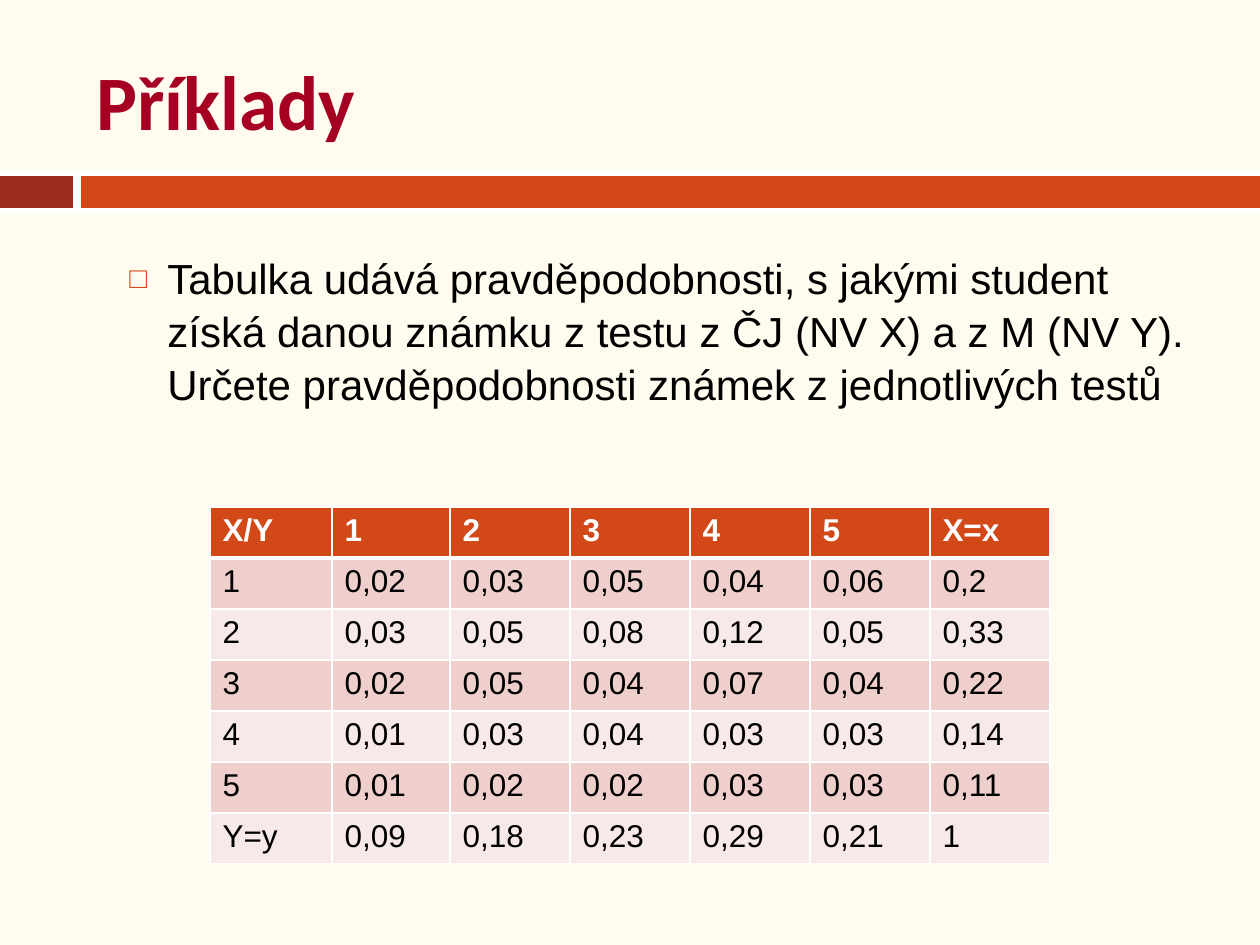
from dataclasses import dataclass

from lxml import etree
from pptx import Presentation
from pptx.dml.color import RGBColor
from pptx.enum.shapes import MSO_SHAPE
from pptx.enum.text import MSO_ANCHOR
from pptx.oxml.ns import qn
from pptx.util import Emu, Pt

RECT = MSO_SHAPE.RECTANGLE
TOP = MSO_ANCHOR.TOP
MIDDLE = MSO_ANCHOR.MIDDLE
SCALE = 914400 / 126

COLORS = {
    "paper": "FFFCEF", "white": "FFFFFF", "black": "000000",
    "rust": "9B2D1F", "orange": "D34817", "wine": "A50021",
    "odd": "EFCFCC", "even": "F7E9E8",
}


@dataclass
class Box:
    left: int
    top: int
    width: int
    height: int


@dataclass
class Bar:
    box: Box
    color: str


@dataclass
class Style:
    size: int
    font: str
    color: str
    bold: bool = False


BARS = [
    Bar(Box(0, 170, 1260, 44), "white"),
    Bar(Box(0, 176, 73, 32), "rust"),
    Bar(Box(81, 176, 1179, 32), "orange"),
]
TITLE = Style(44, "Calibri", "wine", True)
BODY = Style(24, "Arial", "black")
HEAD = Style(18, "Arial", "white", True)
CELL = Style(18, "Arial", "black")
TASK = (
    "Tabulka udává pravděpodobnosti, s jakými student získá danou známku "
    "z testu z ČJ (NV X) a z M (NV Y). Určete pravděpodobnosti známek "
    "z jednotlivých testů"
)
COLS = [122, 118] + [120] * 5
ROW = 51
GRID = [
    ["X/Y", "1", "2", "3", "4", "5", "X=x"],
    ["1", "0,02", "0,03", "0,05", "0,04", "0,06", "0,2"],
    ["2", "0,03", "0,05", "0,08", "0,12", "0,05", "0,33"],
    ["3", "0,02", "0,05", "0,04", "0,07", "0,04", "0,22"],
    ["4", "0,01", "0,03", "0,04", "0,03", "0,03", "0,14"],
    ["5", "0,01", "0,02", "0,02", "0,03", "0,03", "0,11"],
    ["Y=y", "0,09", "0,18", "0,23", "0,29", "0,21", "1"],
]


def px(count: int) -> Emu:
    return Emu(round(count * SCALE))


def rgb(name: str) -> RGBColor:
    return RGBColor.from_string(COLORS[name])


def place(box: Box) -> list[Emu]:
    return [px(side) for side in (box.left, box.top, box.width, box.height)]


def paint(item, name: str) -> None:
    item.fill.solid()
    item.fill.fore_color.rgb = rgb(name)


def add_bar(slide, bar: Bar) -> None:
    shape = slide.shapes.add_shape(RECT, *place(bar.box))
    shape.shadow.inherit = False
    paint(shape, bar.color)
    shape.line.fill.background()


def add_run(para, text: str, style: Style) -> None:
    run = para.add_run()
    run.text = text
    run.font.size = Pt(style.size)
    run.font.name = style.font
    run.font.bold = style.bold
    run.font.color.rgb = rgb(style.color)


def add_text(slide, box: Box, text: str, style: Style, anchor):
    frame = slide.shapes.add_textbox(*place(box)).text_frame
    frame.word_wrap = True
    frame.vertical_anchor = anchor
    para = frame.paragraphs[0]
    add_run(para, text, style)
    return para


def add_mark(para, mark: str, color: str) -> None:
    para.space_before = Pt(5.5)
    para.line_spacing = 1.05
    props = para._p.get_or_add_pPr()
    props.set("marL", str(px(88)))
    props.set("indent", str(px(-38)))
    tint = etree.SubElement(props, qn("a:buClr"))
    etree.SubElement(tint, qn("a:srgbClr"), val=COLORS[color])
    etree.SubElement(props, qn("a:buSzPct"), val="70000")
    etree.SubElement(props, qn("a:buFont"), typeface="Arial")
    etree.SubElement(props, qn("a:buChar"), char=mark)


def add_edge(cell, side: str, width: int) -> None:
    props = cell._tc.get_or_add_tcPr()
    line = etree.SubElement(props, qn(f"a:{side}"), w=str(Pt(width)))
    fill = etree.SubElement(line, qn("a:solidFill"))
    etree.SubElement(fill, qn("a:srgbClr"), val=COLORS["white"])


def fill_cell(cell, text: str, row: int) -> None:
    head = row == 0
    add_run(cell.text_frame.paragraphs[0], text, HEAD if head else CELL)
    edges = {"lnL": 1, "lnR": 1, "lnT": 3 if row == 1 else 1,
             "lnB": 3 if head else 1}
    for side, width in edges.items():
        add_edge(cell, side, width)
    paint(cell, "orange" if head else "odd" if row % 2 else "even")


def add_grid(slide, left: int, top: int) -> None:
    box = Box(left, top, sum(COLS), ROW * len(GRID))
    frame = slide.shapes.add_table(len(GRID), len(COLS), *place(box))
    table = frame.table
    for col, width in zip(table.columns, COLS):
        col.width = px(width)
    for row, texts in enumerate(GRID):
        table.rows[row].height = px(ROW)
        for col, text in enumerate(texts):
            fill_cell(table.cell(row, col), text, row)


def main() -> None:
    deck = Presentation()
    deck.slide_width = px(1260)
    deck.slide_height = px(945)
    slide = deck.slides.add_slide(deck.slide_layouts[6])
    paint(slide.background, "paper")
    for bar in BARS:
        add_bar(slide, bar)
    add_text(slide, Box(84, 32, 1124, 136), "Příklady", TITLE, MIDDLE)
    para = add_text(slide, Box(67, 244, 1144, 620), TASK, BODY, TOP)
    add_mark(para, "□", "orange")
    add_grid(slide, 210, 507)
    deck.save("out.pptx")


if __name__ == "__main__":
    main()
